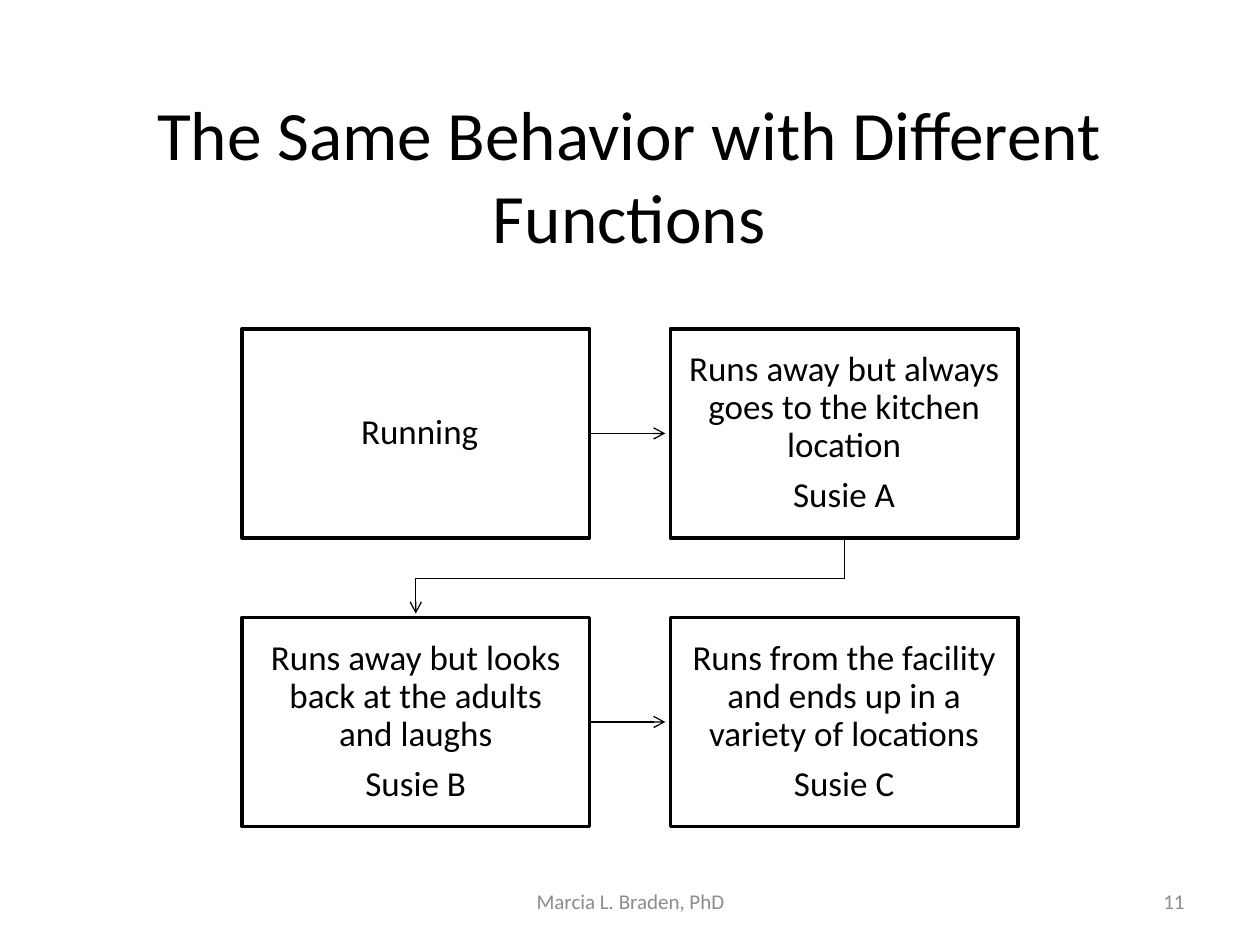
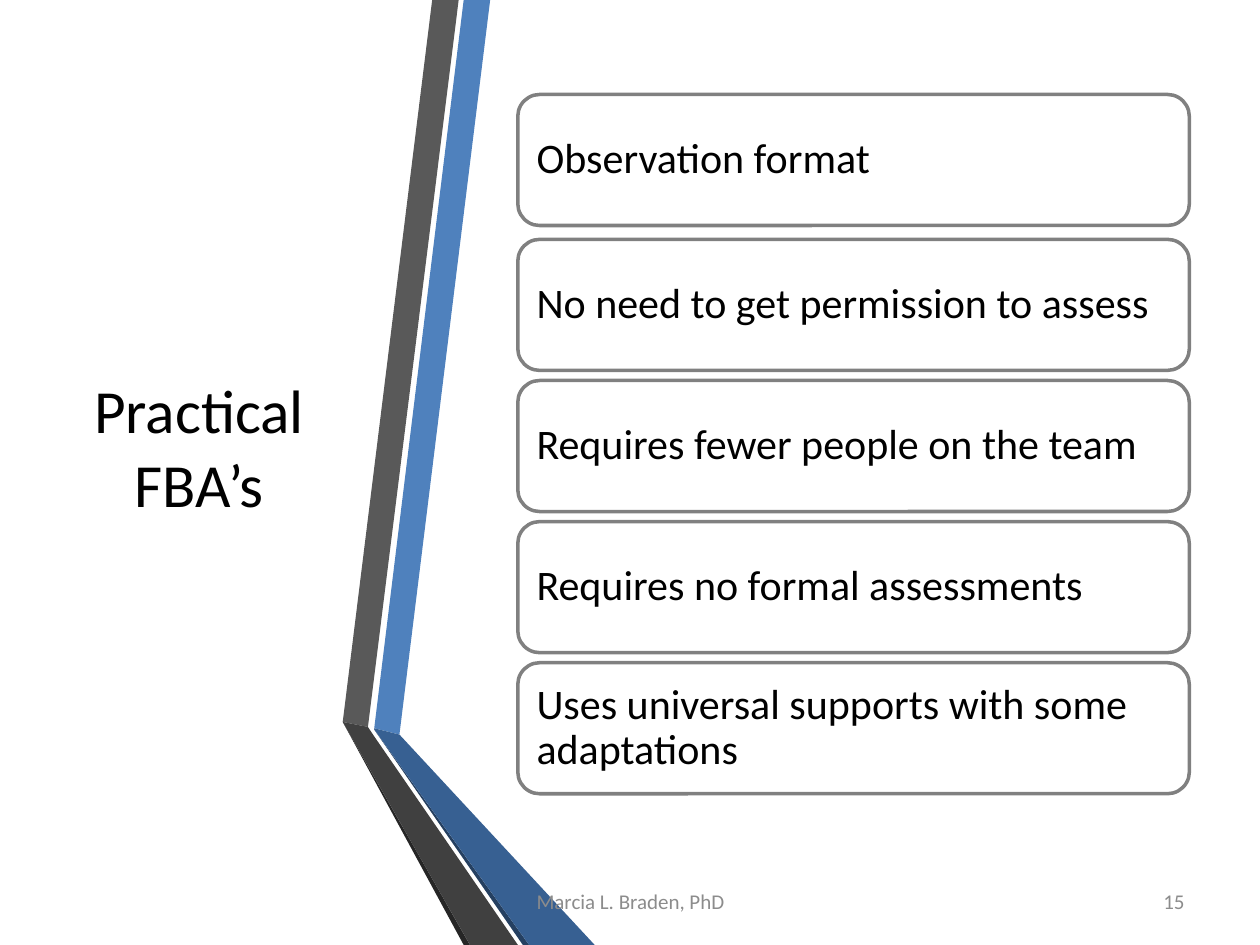
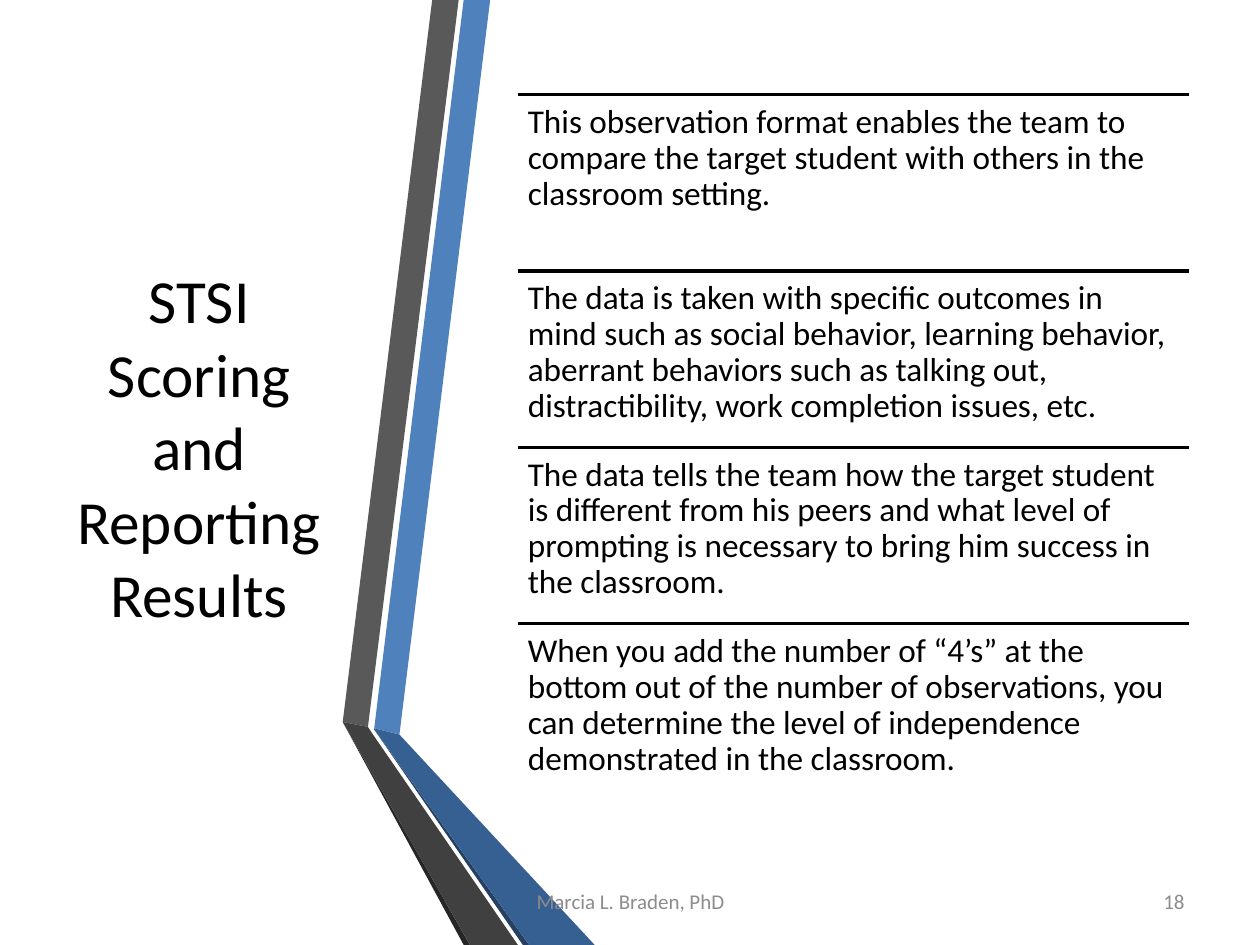
import pptx
import pptx.dml.color
import pptx.enum.shapes
import pptx.enum.text
import pptx.oxml
import pptx.util
from pptx.oxml.ns import qn

Inches = pptx.util.Inches
Pt = pptx.util.Pt
Align = pptx.enum.text.PP_ALIGN
Anchor = pptx.enum.text.MSO_ANCHOR
Shape = pptx.enum.shapes.MSO_SHAPE
Link = pptx.enum.shapes.MSO_CONNECTOR

BLACK, GREY, MUTED = "000000", "808080", "8C8C8C"
AUTHOR = "Marcia L. Braden, PhD"

# Ribbon facets from back to front: fill and corners
RIBBON = [
    ("4F81BD", [(2.97, 5.78), (3.17, 5.83), (3.89, 0), (3.68, 0)]),
    ("595959", [(3.64, 0), (3.43, 0), (2.72, 5.73), (2.92, 5.77)]),
    ("262626", [(2.72, 5.73), (3.68, 7.5), (3.73, 7.5)]),
    ("254061", [(2.97, 5.79), (4.15, 7.5), (4.2, 7.5)]),
    ("376092", [(2.97, 5.79), (4.2, 7.5), (4.72, 7.5), (3.17, 5.83), (2.97, 5.78)]),
    ("404040", [(4.11, 7.5), (2.96, 5.83), (2.92, 5.77), (2.72, 5.73), (3.73, 7.5)]),
]

CASES = [
    [" Running"],
    ["Runs away but always goes to the kitchen location", "Susie A"],
    ["Runs away but looks back at the adults and laughs", "Susie B"],
    ["Runs from the facility and ends up in a variety of locations", "Susie C"],
]

TRAITS = [
    "Observation format",
    "No need to get permission to assess",
    "Requires fewer people on the team",
    "Requires no formal assessments",
    "Uses universal supports with some adaptations",
]

RESULTS = [
    "This observation format enables the team to compare the target student "
    "with others in the classroom setting.",
    "The data is taken with specific outcomes in mind such as social behavior, "
    "learning behavior, aberrant behaviors such as talking out, "
    "distractibility, work completion issues, etc.",
    "The data tells the team how the target student is different from his peers "
    "and what level of prompting is necessary to bring him success in the classroom.",
    "When you add the number of “4’s” at the bottom out of the number of "
    "observations, you can determine the level of independence demonstrated "
    "in the classroom.",
]


def color(text):
    return pptx.dml.color.RGBColor.from_string(text)


def apply(target, values):
    for name, value in values.items():
        setattr(target, name, value)


class Deck:
    """Holds the shared style and the slide being filled."""

    font = "Calibri"

    def __init__(self):
        self.file = pptx.Presentation()
        apply(self.file, {"slide_width": Inches(10), "slide_height": Inches(7.5)})
        self.shapes = None

    def slide(self):
        self.shapes = self.file.slides.add_slide(self.file.slide_layouts[6]).shapes

    def fill_text(self, shape, lines, size, tint=BLACK, align=Align.LEFT,
                  anchor=Anchor.MIDDLE, inset=None, tight=False):
        """Write one paragraph per line; tight suits diagram text."""
        frame = shape.text_frame
        apply(frame, {"word_wrap": True, "vertical_anchor": anchor})
        if inset is not None:
            sides = ("left", "top", "right", "bottom")
            apply(frame, {f"margin_{side}": Inches(inset) for side in sides})
        look = {"alignment": align}
        if tight:
            look |= {"line_spacing": 0.9, "space_after": Pt(0.35 * size)}
        for index, line in enumerate(lines):
            para = frame.add_paragraph() if index else frame.paragraphs[0]
            para.text = line
            apply(para, look)
            for run in para.runs:
                apply(run.font, {"name": self.font, "size": Pt(size)})
                run.font.color.rgb = color(tint)

    def text(self, area, lines, size, **style):
        box = self.shapes.add_textbox(*map(Inches, area))
        self.fill_text(box, lines, size, **style)

    def title(self, area, text, size):
        self.text(area, [text], size, align=Align.CENTER)

    def footer(self, number):
        self.text((3.42, 6.95, 3.17, 0.4), [AUTHOR], 12, tint=MUTED, align=Align.CENTER)
        self.text((7.17, 6.95, 2.33, 0.4), [str(number)], 12, tint=MUTED, align=Align.RIGHT)

    def box(self, kind, area, lines, size, edge, **style):
        shape = self.shapes.add_shape(kind, *map(Inches, area))
        shape.shadow.inherit = False
        shape.fill.background()
        self.stroke(shape, edge, 2)
        self.fill_text(shape, lines, size, tight=True, **style)

    def stroke(self, shape, tint, width, arrow=False):
        shape.line.color.rgb = color(tint)
        shape.line.width = Pt(width)
        if arrow:
            tip = pptx.oxml.parse_xml(
                '<a:tailEnd xmlns:a="http://schemas.openxmlformats.org/drawingml/2006/main"'
                ' type="arrow"/>')
            shape.line._get_or_add_ln().append(tip)

    def line(self, start, end, width, arrow=False):
        link = self.shapes.add_connector(Link.STRAIGHT, *map(Inches, start + end))
        self.stroke(link, BLACK, width, arrow)
        props = link._element.spPr
        props.append(props.makeelement(qn("a:effectLst"), {}))

    def outline(self, points, close):
        spots = [(Inches(x), Inches(y)) for x, y in points]
        pen = self.shapes.build_freeform(*spots[0])
        pen.add_line_segments(spots[1:], close=close)
        shape = pen.convert_to_shape()
        shape.shadow.inherit = False
        return shape

    def bend(self, points):
        path = self.outline(points, close=False)
        path.fill.background()
        self.stroke(path, BLACK, 0.75, arrow=True)

    def ribbon(self):
        for tint, points in RIBBON:
            facet = self.outline(points, close=True)
            facet.fill.solid()
            facet.fill.fore_color.rgb = color(tint)
            facet.line.fill.background()

    def side(self, title):
        """Start a slide with the ribbon and a title at its left."""
        self.slide()
        self.ribbon()
        self.title((0.44, 0.75, 2.28, 5.58), title, 35)


def add_cases(deck):
    deck.slide()
    deck.title((0.71, 0.66, 8.57, 1.45), "The Same Behavior with Different Functions", 39.6)
    left, top, wide, high = 1.92, 2.61, 2.76, 1.66
    step, drop = 3.4, 2.29
    for index, lines in enumerate(CASES):
        row, col = divmod(index, 2)
        x, y = left + col * step, top + row * drop
        deck.box(Shape.RECTANGLE, (x, y, wide, high), lines, 20, BLACK,
                 align=Align.CENTER, inset=0.14)
        if col == 0:
            mid = y + high / 2
            deck.line((x + wide, mid), (x + wide + 0.6, mid), 0.75, arrow=True)
    near, base = left + wide / 2, top + high
    far = near + step
    deck.bend([(far, base), (far, base + 0.32), (near, base + 0.32), (near, base + 0.6)])
    deck.footer(11)


def add_traits(deck):
    deck.side("Practical FBA’s")
    tops = [0.75] + [1.9 + 1.12 * row for row in range(len(TRAITS) - 1)]
    for top, trait in zip(tops, TRAITS):
        deck.box(Shape.ROUNDED_RECTANGLE, (4.11, top, 5.33, 1.04), [trait], 24, GREY,
                 inset=0.1)
    deck.footer(15)


def add_results(deck):
    deck.side("STSI\vScoring and Reporting Results")
    left, wide, high = 4.11, 5.33, 1.4
    for row, result in enumerate(RESULTS):
        top = 0.75 + row * high
        deck.line((left, top), (left + wide, top), 2)
        deck.text((left, top, wide, high), [result], 19, anchor=Anchor.TOP,
                  inset=0.08, tight=True)
    deck.footer(18)


def main():
    deck = Deck()
    add_cases(deck)
    add_traits(deck)
    add_results(deck)
    deck.file.save("out.pptx")


if __name__ == "__main__":
    main()
